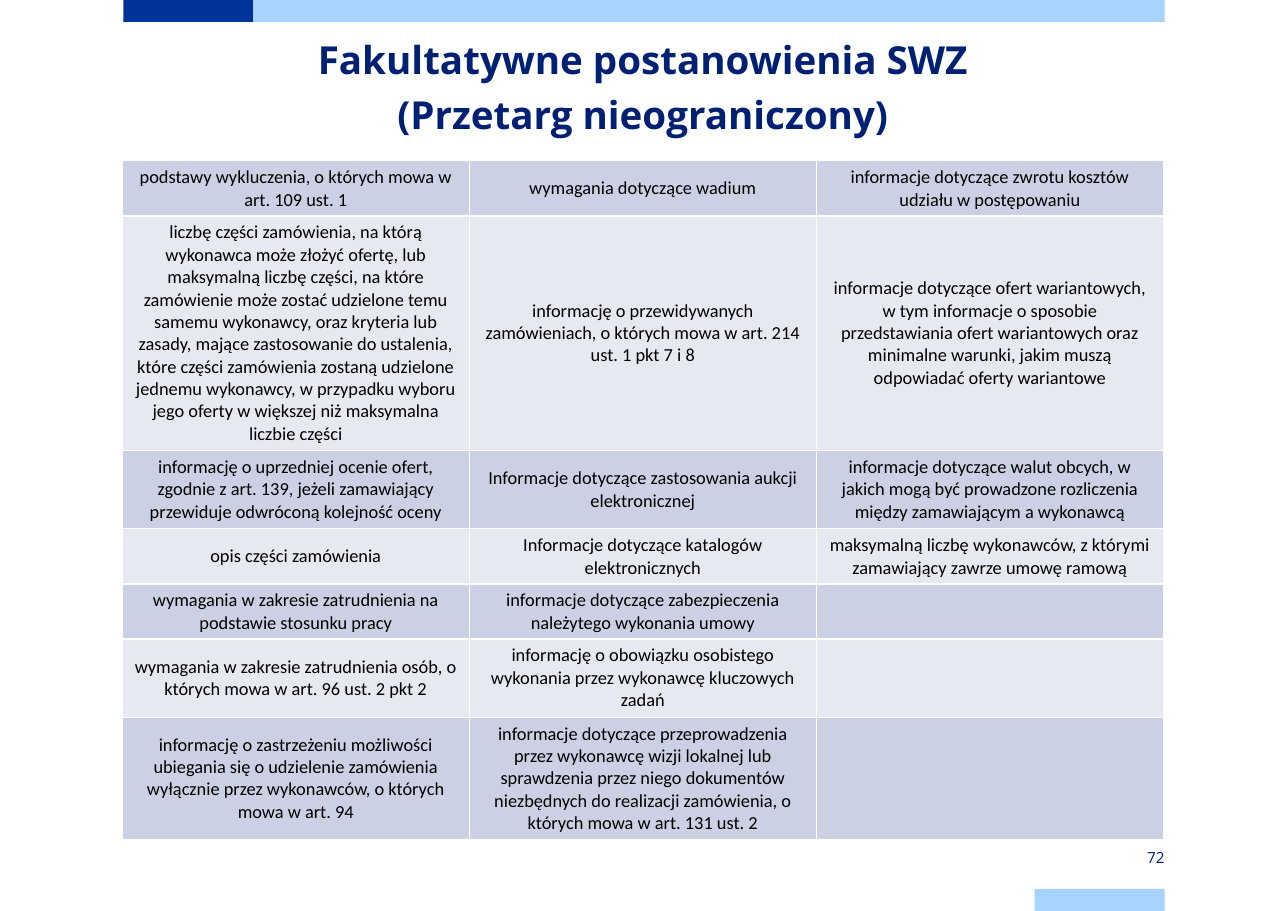
from dataclasses import dataclass

from lxml import etree
from pptx import Presentation
from pptx.dml.color import RGBColor
from pptx.enum.shapes import MSO_SHAPE
from pptx.enum.text import MSO_ANCHOR, PP_ALIGN
from pptx.oxml.ns import qn
from pptx.util import Inches, Pt

RECTANGLE = MSO_SHAPE.RECTANGLE
TOP, MIDDLE = MSO_ANCHOR.TOP, MSO_ANCHOR.MIDDLE
CENTER, RIGHT = PP_ALIGN.CENTER, PP_ALIGN.RIGHT


@dataclass(frozen=True)
class Theme:
    heading_font: str = "Open Sans"
    table_font: str = "Calibri"
    title_size: float = 25.2
    table_size: float = 12
    number_size: float = 10
    navy: str = "002073"
    dark_blue: str = "003399"
    light_blue: str = "A6D3FF"
    black: str = "000000"
    border: str = "FFFFFF"
    bands: tuple = ("CCD0E4", "E7E9F2")


THEME = Theme()

BARS = [
    (1.12, 0, 1.18, THEME.dark_blue),
    (2.3, 0, 8.27, THEME.light_blue),
    (9.39, 8.07, 1.18, THEME.light_blue),
]

# Row height in inches, then the three cells.
PROVISIONS = [
    (0.5, "podstawy wykluczenia, o których mowa w art. 109 ust. 1",
     "wymagania dotyczące wadium",
     "informacje dotyczące zwrotu kosztów udziału w postępowaniu"),
    (2.13, "liczbę części zamówienia, na którą wykonawca może złożyć ofertę, lub "
     "maksymalną liczbę części, na które zamówienie może zostać udzielone temu "
     "samemu wykonawcy, oraz kryteria lub zasady, mające zastosowanie do ustalenia, "
     "które części zamówienia zostaną udzielone jednemu wykonawcy, w przypadku "
     "wyboru jego oferty w większej niż maksymalna liczbie części",
     "informację o przewidywanych zamówieniach, o których mowa w art. 214 ust. 1 "
     "pkt 7 i 8",
     "informacje dotyczące ofert wariantowych, w tym informacje o sposobie "
     "przedstawiania ofert wariantowych oraz minimalne warunki, jakim muszą "
     "odpowiadać oferty wariantowe"),
    (0.71, "informację o uprzedniej ocenie ofert, zgodnie z art. 139, jeżeli "
     "zamawiający przewiduje odwróconą kolejność oceny",
     "Informacje dotyczące zastosowania aukcji elektronicznej",
     "informacje dotyczące walut obcych, w jakich mogą być prowadzone rozliczenia "
     "między zamawiającym a wykonawcą"),
    (0.5, "opis części zamówienia",
     "Informacje dotyczące katalogów elektronicznych",
     "maksymalną liczbę wykonawców, z którymi zamawiający zawrze umowę ramową"),
    (0.5, "wymagania w zakresie zatrudnienia na podstawie stosunku pracy",
     "informacje dotyczące zabezpieczenia należytego wykonania umowy", ""),
    (0.71, "wymagania w zakresie zatrudnienia osób, o których mowa w art. 96 ust. 2 "
     "pkt 2",
     "informację o obowiązku osobistego wykonania przez wykonawcę kluczowych zadań",
     ""),
    (1.11, "informację o zastrzeżeniu możliwości ubiegania się o udzielenie "
     "zamówienia wyłącznie przez wykonawców, o których mowa w art. 94",
     "informacje dotyczące przeprowadzenia przez wykonawcę wizji lokalnej lub "
     "sprawdzenia przez niego dokumentów niezbędnych do realizacji zamówienia, "
     "o których mowa w art. 131 ust. 2", ""),
]


def style_paragraph(paragraph, font_name, size, color, alignment, bold=False):
    paragraph.alignment = alignment
    font = paragraph.font
    font.name = font_name
    font.size = Pt(size)
    font.bold = bold
    font.color.rgb = RGBColor.from_string(color)


def add_bar(slide, left, top, width, color):
    bar = slide.shapes.add_shape(
        RECTANGLE, Inches(left), Inches(top), Inches(width), Inches(0.2))
    bar.shadow.inherit = False
    bar.fill.solid()
    bar.fill.fore_color.rgb = RGBColor.from_string(color)
    bar.line.fill.background()


def add_heading_text(slide, text, left, top, width, height, size, alignment,
                     anchor=TOP, bold=False):
    """Add a navy text box without insets and return its paragraph."""
    box = slide.shapes.add_textbox(
        Inches(left), Inches(top), Inches(width), Inches(height))
    frame = box.text_frame
    frame.word_wrap = True
    frame.vertical_anchor = anchor
    frame.margin_left = frame.margin_right = 0
    frame.margin_top = frame.margin_bottom = 0
    paragraph = frame.paragraphs[0]
    paragraph.text = text
    style_paragraph(paragraph, THEME.heading_font, size, THEME.navy, alignment, bold)
    return paragraph


def set_borders(cell):
    properties = cell._tc.get_or_add_tcPr()
    for side in ("a:lnL", "a:lnR", "a:lnT", "a:lnB"):
        line = etree.SubElement(properties, qn(side), w=str(Pt(1)))
        fill = etree.SubElement(line, qn("a:solidFill"))
        etree.SubElement(fill, qn("a:srgbClr"), val=THEME.border)


def fill_cell(cell, text, color):
    cell.text = text
    cell.vertical_anchor = MIDDLE
    style_paragraph(cell.text_frame.paragraphs[0], THEME.table_font,
                    THEME.table_size, THEME.black, CENTER)
    set_borders(cell)
    cell.fill.solid()
    cell.fill.fore_color.rgb = RGBColor.from_string(color)


def add_provisions_table(slide):
    total_height = sum(height for height, *_ in PROVISIONS)
    table = slide.shapes.add_table(
        len(PROVISIONS), 3, Inches(1.11), Inches(1.46),
        Inches(9.45), Inches(total_height)).table
    table.first_row = False
    for row_index, (height, *texts) in enumerate(PROVISIONS):
        table.rows[row_index].height = Inches(height)
        for column_index, text in enumerate(texts):
            fill_cell(table.cell(row_index, column_index), text,
                      THEME.bands[row_index % 2])


def main():
    presentation = Presentation()
    presentation.slide_width = Inches(11.69)
    presentation.slide_height = Inches(8.27)
    slide = presentation.slides.add_slide(presentation.slide_layouts[6])

    for bar in BARS:
        add_bar(slide, *bar)
    title = add_heading_text(
        slide, "Fakultatywne postanowienia SWZ\v(Przetarg nieograniczony)",
        1.11, 0.25, 9.45, 0.55, THEME.title_size, CENTER, bold=True)
    title.line_spacing = Pt(36)
    add_heading_text(slide, "72", 9.39, 7.68, 1.18, 0.2,
                     THEME.number_size, RIGHT, anchor=MIDDLE)
    add_provisions_table(slide)

    presentation.save("out.pptx")


if __name__ == "__main__":
    main()
